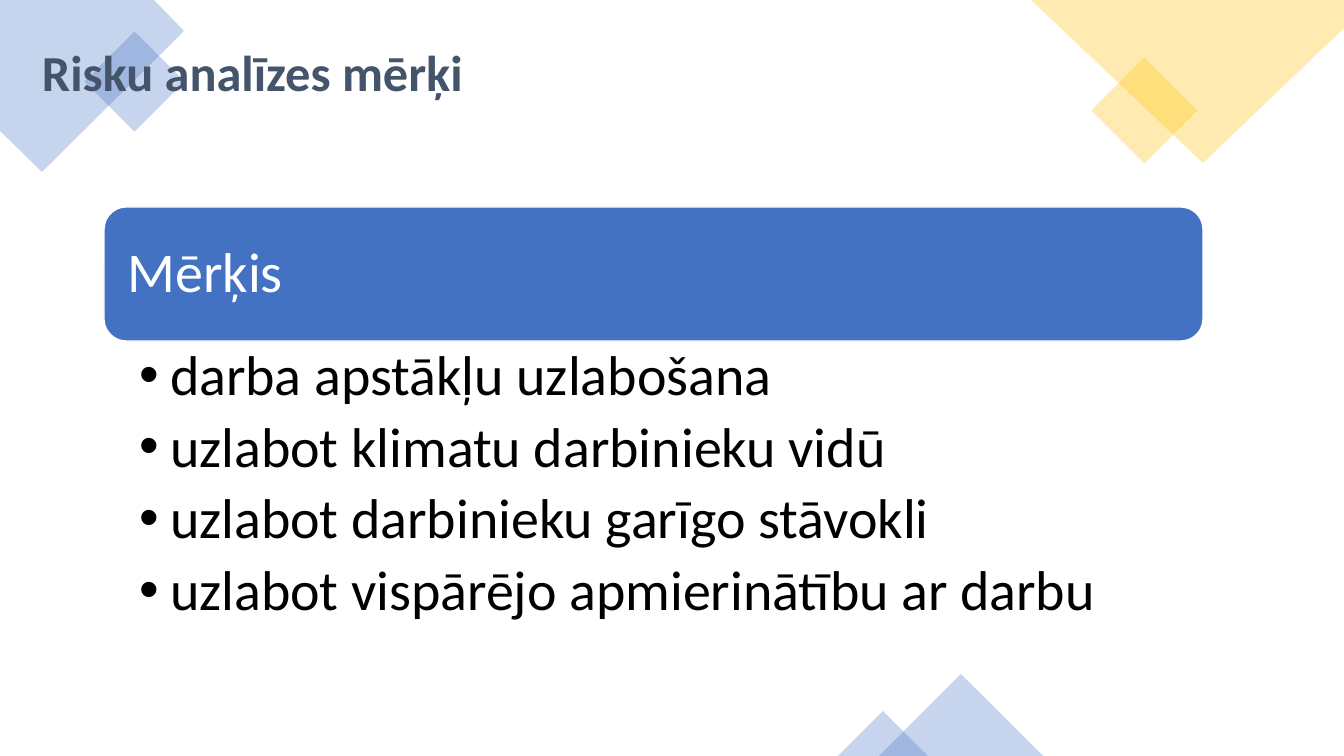
from lxml import etree
from pptx import Presentation
from pptx import util as u
from pptx.dml.color import RGBColor
from pptx.enum import shapes as sh, text as tx
from pptx.oxml.ns import qn

SCALE = 914400 / 100.8
WIDE, HIGH = 1344, 756
BLUE, GOLD = "4472C4", "FFC000"
GOALS = [
    "darba apstākļu uzlabošana",
    "uzlabot klimatu darbinieku vidū",
    "uzlabot darbinieku garīgo stāvokli",
    "uzlabot vispārējo apmierinātību ar darbu",
]


def px(n):
    """Turn px into EMU."""
    return u.Emu(round(n * SCALE))


def rgb(code):
    """Turn a hex string into a colour."""
    return RGBColor.from_string(code)


def tint(shape, code):
    """Give a shape a fill at 30 % opacity, with no line or shadow."""
    shape.shadow.inherit = False
    shape.line.fill.background()
    shape.fill.solid()
    shape.fill.fore_color.rgb = rgb(code)
    tone = shape.fill._xPr.find(".//" + qn("a:srgbClr"))
    etree.SubElement(tone, qn("a:alpha"), val="30000")


def poly(slide, code, dots):
    """Draw a tinted outline through the given points."""
    first, *rest = [(px(x), px(y)) for x, y in dots]
    pen = slide.shapes.build_freeform(*first)
    pen.add_line_segments(rest, close=True)
    tint(pen.convert_to_shape(), code)


def gem(slide, code, x, y, size):
    """Draw a tinted square standing on its corner."""
    shape = slide.shapes.add_shape(
        sh.MSO_SHAPE.RECTANGLE, px(x), px(y), px(size), px(size))
    shape.rotation = 315
    tint(shape, code)


def peak(slide, x, width):
    """Draw a tinted triangle rising from the bottom edge."""
    tall = width // 2
    shape = slide.shapes.add_shape(
        sh.MSO_SHAPE.ISOSCELES_TRIANGLE,
        px(x), px(HIGH - tall), px(width), px(tall))
    tint(shape, BLUE)


def decor(slide):
    """Place the see-through shapes along the slide edges."""
    poly(slide, BLUE, [(0, 0), (154, 0), (184, 31), (42, 172), (0, 131)])
    gem(slide, BLUE, 99, 46, 71)
    gem(slide, GOLD, 1107, 73, 75)
    poly(slide, GOLD, [(1031, 0), (WIDE, 0), (WIDE, 28), (1203, 163)])
    peak(slide, 879, 164)
    peak(slide, 838, 90)


def setup(shape, pads, anchor):
    """Set wrap, insets and anchor, and return the text frame."""
    frame = shape.text_frame
    frame.word_wrap = True
    frame.vertical_anchor = anchor
    (frame.margin_left, frame.margin_top,
     frame.margin_right, frame.margin_bottom) = map(px, pads)
    return frame


def write(para, words, size, code, bold=False):
    """Add one run to a left-aligned paragraph."""
    para.alignment = tx.PP_ALIGN.LEFT
    run = para.add_run()
    run.text = words
    font = run.font
    font.name, font.size, font.bold = "Calibri", u.Pt(size), bold
    font.color.rgb = rgb(code)


def bullet(para):
    """Give a paragraph a hanging black bullet."""
    props = para._p.get_or_add_pPr()
    props.set("marL", str(px(31)))
    props.set("indent", str(-px(31)))
    tone = etree.SubElement(props, qn("a:buClr"))
    etree.SubElement(tone, qn("a:srgbClr"), val="000000")
    etree.SubElement(props, qn("a:buFont"), typeface="Arial")
    etree.SubElement(props, qn("a:buChar"), char="•")


def title(slide, x, y, w, h):
    """Write the slide title in the given box."""
    box = slide.shapes.add_textbox(px(x), px(y), px(w), px(h))
    frame = setup(box, (10, 5, 10, 5), tx.MSO_ANCHOR.MIDDLE)
    write(frame.paragraphs[0], "Risku analīzes mērķi", 36, "44546A", True)


def panel(slide, x, y, w, h):
    """Place the heading bar and the list of goals below it."""
    head = 134
    bar = slide.shapes.add_shape(
        sh.MSO_SHAPE.ROUNDED_RECTANGLE, px(x), px(y), px(w), px(head))
    bar.shadow.inherit = False
    bar.fill.solid()
    bar.fill.fore_color.rgb = rgb("4372C3")
    bar.line.color.rgb = rgb("FFFFFF")
    bar.line.width = u.Pt(1)
    frame = setup(bar, (17, 17, 17, 17), tx.MSO_ANCHOR.MIDDLE)
    para = frame.paragraphs[0]
    para.line_spacing = 0.9
    write(para, "Mērķis", 40, "FFFFFF")

    box = slide.shapes.add_textbox(px(x), px(y + head), px(w), px(h - head))
    frame = setup(box, (35, 6, 31, 6), tx.MSO_ANCHOR.TOP)
    for i, goal in enumerate(GOALS):
        para = frame.add_paragraph() if i else frame.paragraphs[0]
        para.level = 1
        para.line_spacing = 0.9
        para.space_before = u.Pt(8 if i else 0)
        bullet(para)
        write(para, goal, 40, "000000")


def main():
    """Build and save the slide."""
    deck = Presentation()
    deck.slide_width, deck.slide_height = px(WIDE), px(HIGH)
    slide = deck.slides.add_slide(deck.slide_layouts[6])
    decor(slide)
    title(slide, 32, 22, 1159, 98)
    panel(slide, 104, 207, 1099, 438)
    deck.save("out.pptx")


if __name__ == "__main__":
    main()
